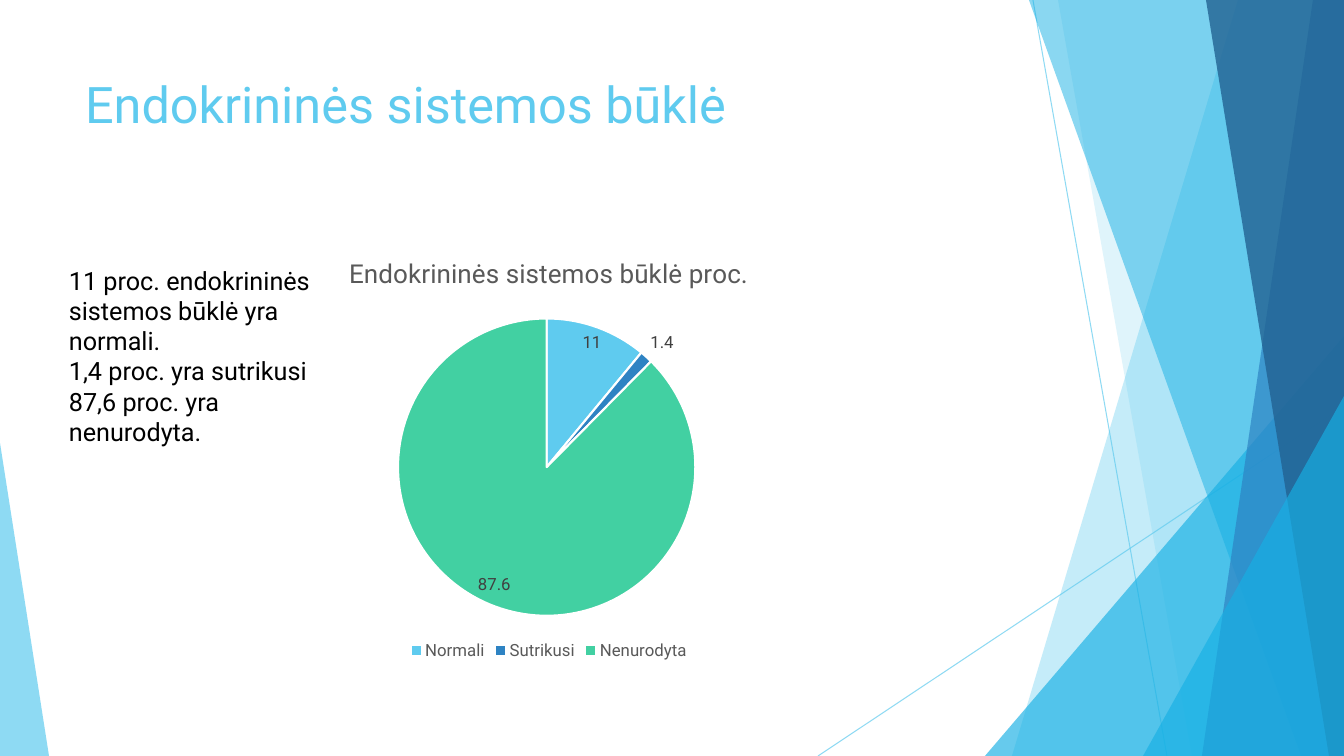
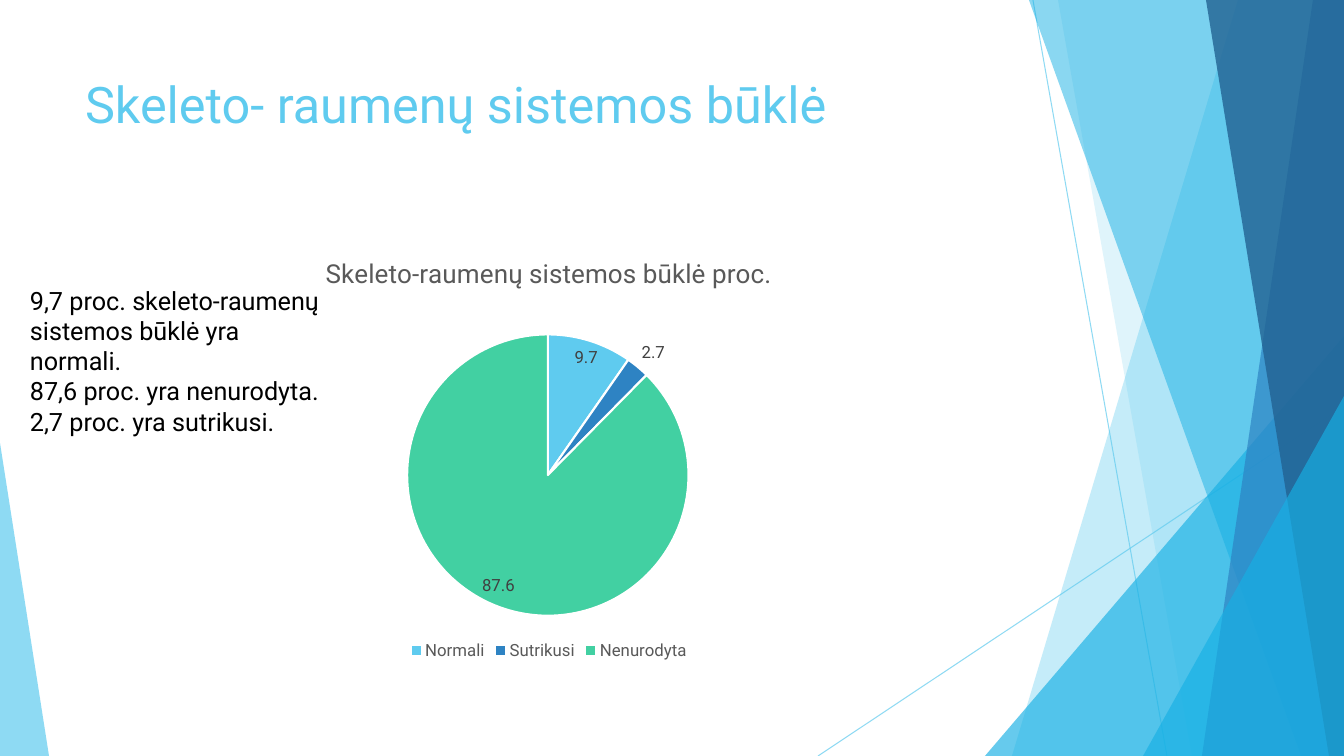
from lxml.etree import SubElement
from pptx import Presentation
from pptx.chart.data import CategoryChartData
from pptx.dml.color import RGBColor
from pptx.enum.chart import XL_CHART_TYPE, XL_LABEL_POSITION, XL_LEGEND_POSITION
from pptx.enum.shapes import MSO_CONNECTOR, MSO_SHAPE
from pptx.enum.text import MSO_ANCHOR, MSO_AUTO_SIZE, PP_ALIGN
from pptx.oxml.ns import qn
from pptx.util import Emu, Pt

WIDTH, HEIGHT = 1344, 756
SCALE = 12192000 / WIDTH
FONT = "Roboto"
COLORS = {
    "sky": "5FCBEF", "cyan": "17B0E4", "blue": "2E83C3", "navy": "226292",
    "green": "42D0A2", "white": "FFFFFF", "black": "000000",
    "heading": "595959", "label": "404040",
}
TITLE_BOX = (75, 68, 948, 145)
CHART_BOX = (75, 238, 948, 427)

CATEGORIES = ("Normali", "Sutrikusi", "Nenurodyta")
SLICE_COLORS = ("sky", "blue", "green")

# Each line: start x, start y, end x, end y
LINES = ((1033, 0, 1167, 756), (1344, 406, 818, 756))
# Each band: x of its slanted edge at the top and at the bottom, colour, opacity
BACK_BANDS = ((1238, 1012, "sky", 36), (1058, 1192, "sky", 20))
FRONT_BANDS = ((1029, 1301, "cyan", 50), (1313, 1202, "blue", 70),
               (1206, 1329, "navy", 80))

SLIDES = (
    {
        "title": "Endokrininės sistemos būklė",
        "chart": "Endokrininės sistemos būklė proc.",
        "values": (11, 1.4, 87.6),
        "notes_box": (59, 260, 262, 254),
        "notes": ("11 proc. endokrininės sistemos būklė yra normali.",
                  "1,4 proc. yra sutrikusi",
                  "87,6 proc. yra nenurodyta."),
    },
    {
        "title": "Skeleto- raumenų sistemos būklė",
        "chart": "Skeleto-raumenų sistemos būklė proc.",
        "values": (9.7, 2.7, 87.6),
        "notes_box": (20, 280, 323, 194),
        "notes": ("9,7 proc. skeleto-raumenų sistemos būklė yra normali.",
                  "87,6 proc. yra nenurodyta.",
                  "2,7 proc. yra sutrikusi."),
    },
)


def px(*lengths):
    return [Emu(round(length * SCALE)) for length in lengths]


def color(name):
    return RGBColor.from_string(COLORS[name])


def style_font(font, size, name):
    font.name, font.size, font.bold = FONT, Pt(size), False
    font.color.rgb = color(name)


def add_span(para, text, size, name):
    span = para.add_run()
    span.text = text
    style_font(span.font, size, name)


def set_opacity(shape, percent):
    rgb = next(shape.element.iter(qn("a:srgbClr")))
    SubElement(rgb, qn("a:alpha")).set("val", str(percent * 1000))


def paint(shape, name, percent):
    shape.shadow.inherit = False
    shape.fill.solid()
    shape.fill.fore_color.rgb = color(name)
    shape.line.fill.background()
    set_opacity(shape, percent)


def add_line(shapes, ends):
    line = shapes.add_connector(MSO_CONNECTOR.STRAIGHT, *px(*ends))
    line.line.width = Pt(0.75)
    line.line.color.rgb = color("sky")
    set_opacity(line, 70)
    SubElement(line.element.find(qn("p:spPr")), qn("a:effectLst"))


def add_band(shapes, top, bottom, name, percent):
    """Fill from a slanted edge to the right side of the slide."""
    outline = shapes.build_freeform(*px(top, 0))
    outline.add_line_segments(
        [px(WIDTH, 0), px(WIDTH, HEIGHT), px(bottom, HEIGHT)], close=True)
    paint(outline.convert_to_shape(), name, percent)


def add_corner(shapes, box, apex, name, percent):
    """Place a right triangle whose apex is at the left (0) or right (1)."""
    corner = shapes.add_shape(MSO_SHAPE.ISOSCELES_TRIANGLE, *px(*box))
    corner.adjustments[0] = apex
    paint(corner, name, percent)


def add_facets(page, layout):
    """Draw the shared background and keep it behind everything on the layout."""
    group = page.shapes.add_group_shape()
    shapes = group.shapes
    for ends in LINES:
        add_line(shapes, ends)
    for band in BACK_BANDS:
        add_band(shapes, *band)
    add_corner(shapes, (985, 336, 359, 420), 1, "cyan", 66)
    for band in FRONT_BANDS:
        add_band(shapes, *band)
    add_corner(shapes, (1143, 396, 201, 360), 1, "cyan", 66)
    add_corner(shapes, (0, 443, 49, 313), 0, "sky", 70)
    for number, item in enumerate(group.element.iter(qn("p:cNvPr")), 100):
        item.set("id", str(number))
    layout.shapes.element.insert(2, group.element)


def add_title(page, box, text):
    title = page.shapes.title
    title.left, title.top, title.width, title.height = px(*box)
    frame = title.text_frame
    frame.vertical_anchor = MSO_ANCHOR.TOP
    para = frame.paragraphs[0]
    para.alignment = PP_ALIGN.LEFT
    add_span(para, text, 36, "sky")


def add_pie(page, box, heading, values):
    data = CategoryChartData()
    data.categories = CATEGORIES
    data.add_series(heading, values)
    chart = page.shapes.add_chart(XL_CHART_TYPE.PIE, *px(*box), data).chart
    style_font(chart.font, 10, "black")

    chart.has_title = True
    chart.chart_title.include_in_layout = False
    add_span(chart.chart_title.text_frame.paragraphs[0], heading, 18.6, "heading")

    chart.has_legend = True
    chart.legend.position = XL_LEGEND_POSITION.BOTTOM
    chart.legend.include_in_layout = False
    style_font(chart.legend.font, 12, "heading")

    plot = chart.plots[0]
    plot.vary_by_categories = True
    for index, name in enumerate(SLICE_COLORS):
        piece = plot.series[0].points[index].format
        piece.fill.solid()
        piece.fill.fore_color.rgb = color(name)
        piece.line.color.rgb = color("white")
        piece.line.width = Pt(1.5)

    labels = plot.series[0].data_labels
    labels.show_value = True
    labels.position = XL_LABEL_POSITION.BEST_FIT
    style_font(labels.font, 12, "label")


def add_notes(page, box, lines):
    frame = page.shapes.add_textbox(*px(*box)).text_frame
    frame.word_wrap = True
    frame.auto_size = MSO_AUTO_SIZE.SHAPE_TO_FIT_TEXT
    for index, line in enumerate(lines):
        para = frame.add_paragraph() if index else frame.paragraphs[0]
        add_span(para, line, 18, "black")


def add_pie_slide(deck, layout, content):
    page = deck.slides.add_slide(layout)
    add_title(page, TITLE_BOX, content["title"])
    add_pie(page, CHART_BOX, content["chart"], content["values"])
    add_notes(page, content["notes_box"], content["notes"])
    return page


def main():
    deck = Presentation()
    deck.slide_width, deck.slide_height = px(WIDTH, HEIGHT)
    layout = deck.slide_layouts.get_by_name("Title Only")
    pages = [add_pie_slide(deck, layout, content) for content in SLIDES]
    add_facets(pages[0], layout)
    deck.save("out.pptx")


if __name__ == "__main__":
    main()
